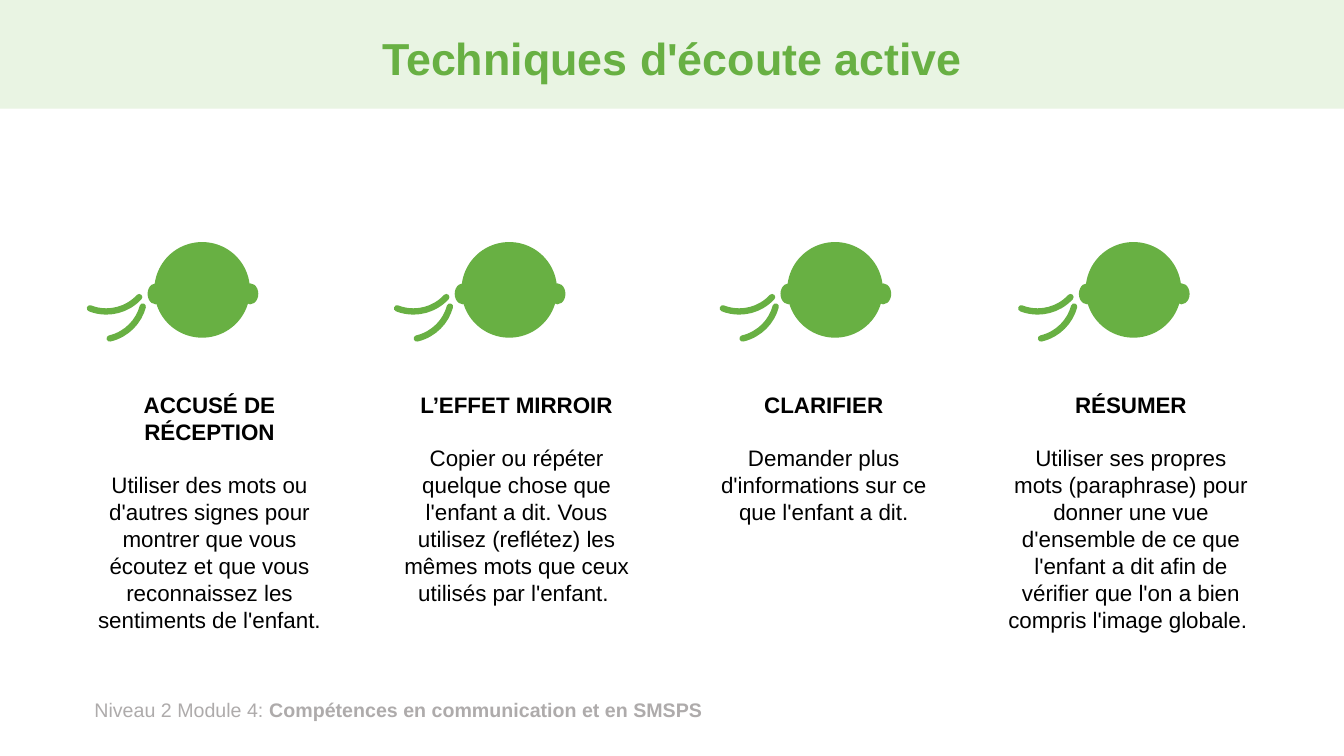
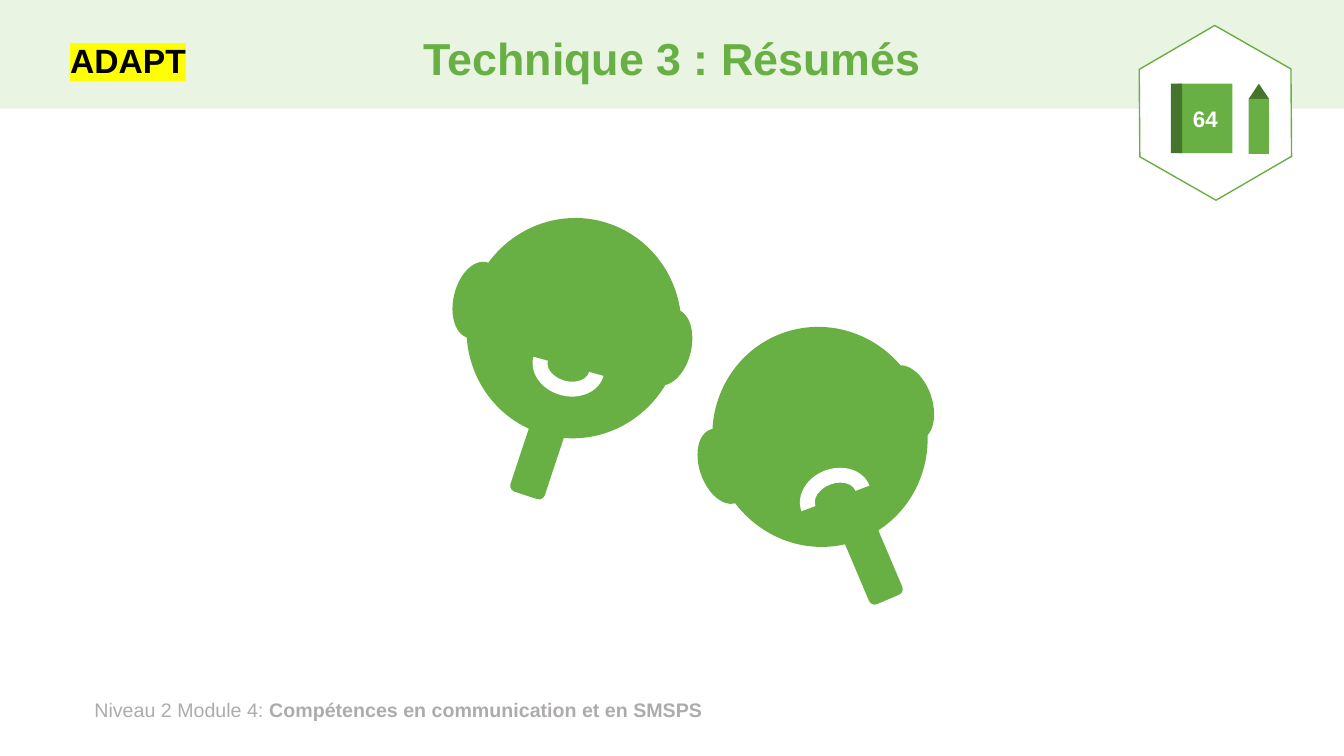
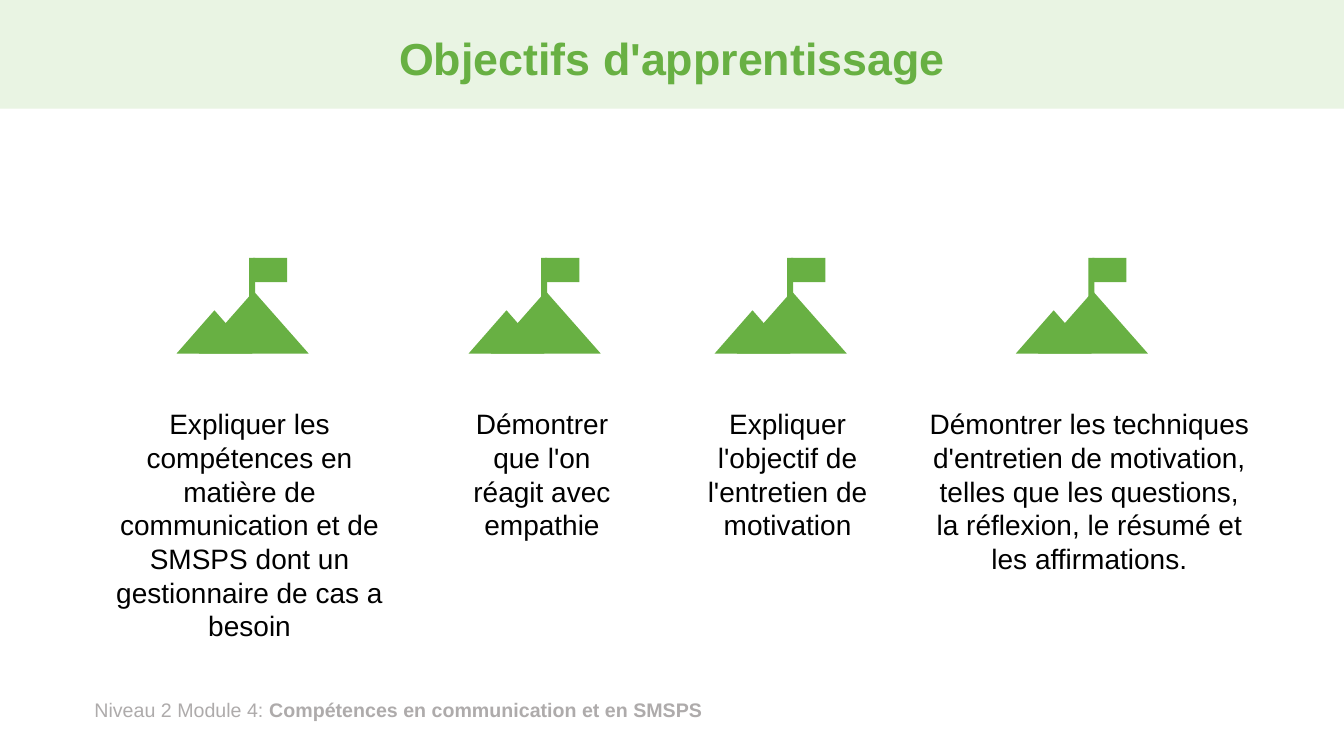
import dataclasses

import pptx
import pptx.dml.color
import pptx.enum.shapes
import pptx.enum.text
import pptx.oxml
import pptx.oxml.ns
import pptx.util

Cm = pptx.util.Cm
Pt = pptx.util.Pt
SHAPE = pptx.enum.shapes.MSO_SHAPE
ALIGN = pptx.enum.text.PP_ALIGN
ANCHOR = pptx.enum.text.MSO_ANCHOR


# Theme: colours in RRGGBB, type sizes in points
@dataclasses.dataclass(frozen=True)
class Theme:
    font: str = "Arial"
    green: str = "68B043"
    dark_green: str = "45752C"
    band: str = "E9F4E3"
    grey: str = "AEABAB"
    black: str = "000000"
    white: str = "FFFFFF"
    marker: str = "FFFF00"
    title: int = 32
    label: int = 24
    goal: int = 20
    body: int = 16
    footer: int = 14


THEME = Theme()

# Content
TECHNIQUES = [
    ("ACCUSÉ DE RÉCEPTION",
     "Utiliser des mots ou d'autres signes pour montrer que vous écoutez "
     "et que vous reconnaissez les sentiments de l'enfant."),
    ("L’EFFET MIRROIR",
     "Copier ou répéter quelque chose que l'enfant a dit. Vous utilisez "
     "(reflétez) les mêmes mots que ceux utilisés par l'enfant. "),
    ("CLARIFIER",
     "Demander plus d'informations sur ce que l'enfant a dit."),
    ("RÉSUMER",
     "Utiliser ses propres mots (paraphrase) pour donner une vue d'ensemble "
     "de ce que l'enfant a dit afin de vérifier que l'on a bien compris "
     "l'image globale. "),
]
HEAD_LEFTS = [3.89, 11.63, 19.84, 27.36]

# Icon left, text left, text width, text
GOALS = [
    (4.45, 2.34, 7.9,
     "Expliquer les compétences en matière de communication et de SMSPS "
     "dont un gestionnaire de cas a besoin"),
    (11.81, 11.3, 4.72, "Démontrer que l'on réagit avec empathie"),
    (18.01, 17.35, 5, "Expliquer l'objectif de l'entretien de motivation"),
    (25.6, 23.16, 8.59,
     "Démontrer les techniques d'entretien de motivation, telles que les "
     "questions, la réflexion, le résumé et les affirmations."),
]


# Basic elements
def rgb(colour):
    return pptx.dml.color.RGBColor.from_string(colour)


def add_run(p, text, size, colour, bold=False):
    r = p.add_run()
    r.text = text
    r.font.name = THEME.font
    r.font.size = Pt(size)
    r.font.bold = bold
    r.font.color.rgb = rgb(colour)
    return r


def add_shape(shapes, kind, left, top, width, height, fill=THEME.green,
              line=None, weight=1, rotation=0, adjust=()):
    sp = shapes.add_shape(kind, Cm(left), Cm(top), Cm(width), Cm(height))
    sp.shadow.inherit = False
    sp.rotation = rotation
    for i, value in enumerate(adjust):
        sp.adjustments[i] = value
    if fill:
        sp.fill.solid()
        sp.fill.fore_color.rgb = rgb(fill)
    else:
        sp.fill.background()
    if line:
        sp.line.color.rgb = rgb(line)
        sp.line.width = Pt(weight)
    else:
        sp.line.fill.background()
    return sp


def add_text(s, left, top, width, height, align=ALIGN.CENTER):
    """Add an empty wrapped text box; return it with its first paragraph."""
    sp = s.shapes.add_textbox(Cm(left), Cm(top), Cm(width), Cm(height))
    tf = sp.text_frame
    tf.word_wrap = True
    p = tf.paragraphs[0]
    p.alignment = align
    return sp, p


def highlight(r, colour):
    mark = pptx.oxml.parse_xml(
        f'<a:highlight {pptx.oxml.ns.nsdecls("a")}>'
        f'<a:srgbClr val="{colour}"/></a:highlight>')
    r.font.fill  # the highlight must stand between fill and typeface
    r._r.xpath("./a:rPr/a:latin")[0].addprevious(mark)


# Shared parts
def set_up_layout(layout, s):
    """Place the title, and move the band and footer into the layout."""
    for ph in list(layout.placeholders):
        if ph.placeholder_format.idx:
            ph.element.getparent().remove(ph.element)
    title = layout.placeholders[0]
    title.left, title.top = Cm(2.34), Cm(0.33)
    title.width, title.height = Cm(29.21), Cm(2.41)
    title.text_frame.vertical_anchor = ANCHOR.MIDDLE

    band = add_shape(s.shapes, SHAPE.RECTANGLE, 0, 0, 33.87, 2.74, THEME.band)
    footer, p = add_text(s, 2.13, 17.45, 17.32, 0.86, ALIGN.LEFT)
    add_run(p, "Niveau 2 Module 4: ", THEME.footer, THEME.grey)
    add_run(p, "Compétences en communication et en SMSPS",
            THEME.footer, THEME.grey, True)
    title.element.addprevious(band.element)
    title.element.addnext(footer.element)


def set_title(s, text):
    p = s.shapes.title.text_frame.paragraphs[0]
    p.alignment = ALIGN.CENTER
    p.line_spacing = 0.9
    add_run(p, text, THEME.title, THEME.green, True)


# Icons
def add_listener(s, left):
    shapes = s.shapes.add_group_shape().shapes
    add_shape(shapes, SHAPE.OVAL, left, 6.1, 2.41, 2.41)
    for dx in (-0.17, 2.21):
        add_shape(shapes, SHAPE.OVAL, left + dx, 7.14, 0.41, 0.53)
    for dx, top, angles in ((-2.34, 5.59, (25.68, 66.87)),
                            (-2.51, 6.3, (9.09, 46.16))):
        wave = add_shape(shapes, SHAPE.ARC, left + dx, top, 2.26, 2.26,
                         None, THEME.green, 4.5, adjust=angles)
        wave.element.xpath("./p:spPr/a:ln")[0].set("cap", "rnd")


def add_paddle(s, handle, handle_turn, face, ears, face_turn,
               mouth, mouth_turn):
    shapes = s.shapes.add_group_shape().shapes
    add_shape(shapes, SHAPE.ROUNDED_RECTANGLE, *handle, 0.91, 2.64,
              rotation=handle_turn)
    add_shape(shapes, SHAPE.OVAL, *face, 5.41, 5.56, rotation=face_turn)
    for ear in ears:
        add_shape(shapes, SHAPE.OVAL, *ear, 1.19, 1.96, rotation=face_turn)
    add_shape(shapes, SHAPE.BLOCK_ARC, *mouth, 1.83, 1.5, THEME.white,
              rotation=mouth_turn, adjust=(108, 0, 0.25))


def add_workbook_badge(s, page):
    shapes = s.shapes.add_group_shape().shapes
    add_shape(shapes, SHAPE.HEXAGON, 28.42, 0.94, 4.42, 3.81, THEME.white,
              THEME.green, rotation=29.7, adjust=(0.29,))
    book = add_shape(shapes, SHAPE.RECTANGLE, 29.69, 2.11, 1.37, 1.75)
    tf = book.text_frame
    tf.vertical_anchor = ANCHOR.MIDDLE
    p = tf.paragraphs[0]
    p.alignment = ALIGN.CENTER
    add_run(p, page, THEME.body, THEME.white, True)
    add_shape(shapes, SHAPE.RECTANGLE, 29.51, 2.11, 0.28, 1.75,
              THEME.dark_green)
    add_shape(shapes, SHAPE.ISOSCELES_TRIANGLE, 31.47, 2.11, 0.51, 0.38,
              THEME.dark_green)
    add_shape(shapes, SHAPE.RECTANGLE, 31.47, 2.49, 0.51, 1.39)


def add_summit(s, left):
    shapes = s.shapes.add_group_shape().shapes
    for kind, dx, top, width, height in (
            (SHAPE.RECTANGLE, 1.83, 6.5, 0.15, 1.02),
            (SHAPE.RECTANGLE, 1.93, 6.5, 0.86, 0.61),
            (SHAPE.ISOSCELES_TRIANGLE, 0.56, 7.34, 2.77, 1.57),
            (SHAPE.ISOSCELES_TRIANGLE, 0, 7.82, 1.91, 1.09)):
        add_shape(shapes, kind, left + dx, top, width, height)


# Slides
def fill_techniques(s):
    set_title(s, "Techniques d'écoute active")
    for i, (name, description) in enumerate(TECHNIQUES):
        sp, p = add_text(s, 1.94 + 7.74 * i, 9.73, 6.68, 6.4)
        p.space_after = Pt(19)
        add_run(p, name, THEME.body, THEME.black, True)
        p = sp.text_frame.add_paragraph()
        p.alignment = ALIGN.CENTER
        add_run(p, description, THEME.body, THEME.black)
    for left in HEAD_LEFTS:
        add_listener(s, left)


def fill_summaries(s):
    set_title(s, "Technique 3 : Résumés")
    add_paddle(s, handle=(13.21, 9.91), handle_turn=18.4,
               face=(11.76, 5.49), ears=((11.43, 6.58), (16.23, 7.77)),
               face_turn=13.8, mouth=(13.41, 8.48), mouth_turn=195.3)
    add_paddle(s, handle=(21.41, 12.57), handle_turn=337,
               face=(17.96, 8.23), ears=((17.63, 10.77), (22.3, 9.17)),
               face_turn=341, mouth=(20.14, 11.81), mouth_turn=339.3)
    sp, p = add_text(s, 1.27, 0.89, 3.91, 1.27)
    r = add_run(p, "ADAPT", THEME.label, THEME.black, True)
    highlight(r, THEME.marker)
    add_workbook_badge(s, "64")


def fill_goals(s):
    set_title(s, "Objectifs d'apprentissage")
    for icon_left, left, width, text in GOALS:
        add_summit(s, icon_left)
        sp, p = add_text(s, left, 10.13, width, 6.25)
        add_run(p, text, THEME.goal, THEME.black)


def main():
    prs = pptx.Presentation()
    prs.slide_width, prs.slide_height = Cm(33.87), Cm(19.05)
    layout = prs.slide_layouts.get_by_name("Title Only")
    slides = [prs.slides.add_slide(layout) for _ in range(3)]
    set_up_layout(layout, slides[0])
    for s, fill in zip(slides, (fill_techniques, fill_summaries, fill_goals)):
        fill(s)
    prs.save("out.pptx")


if __name__ == "__main__":
    main()
